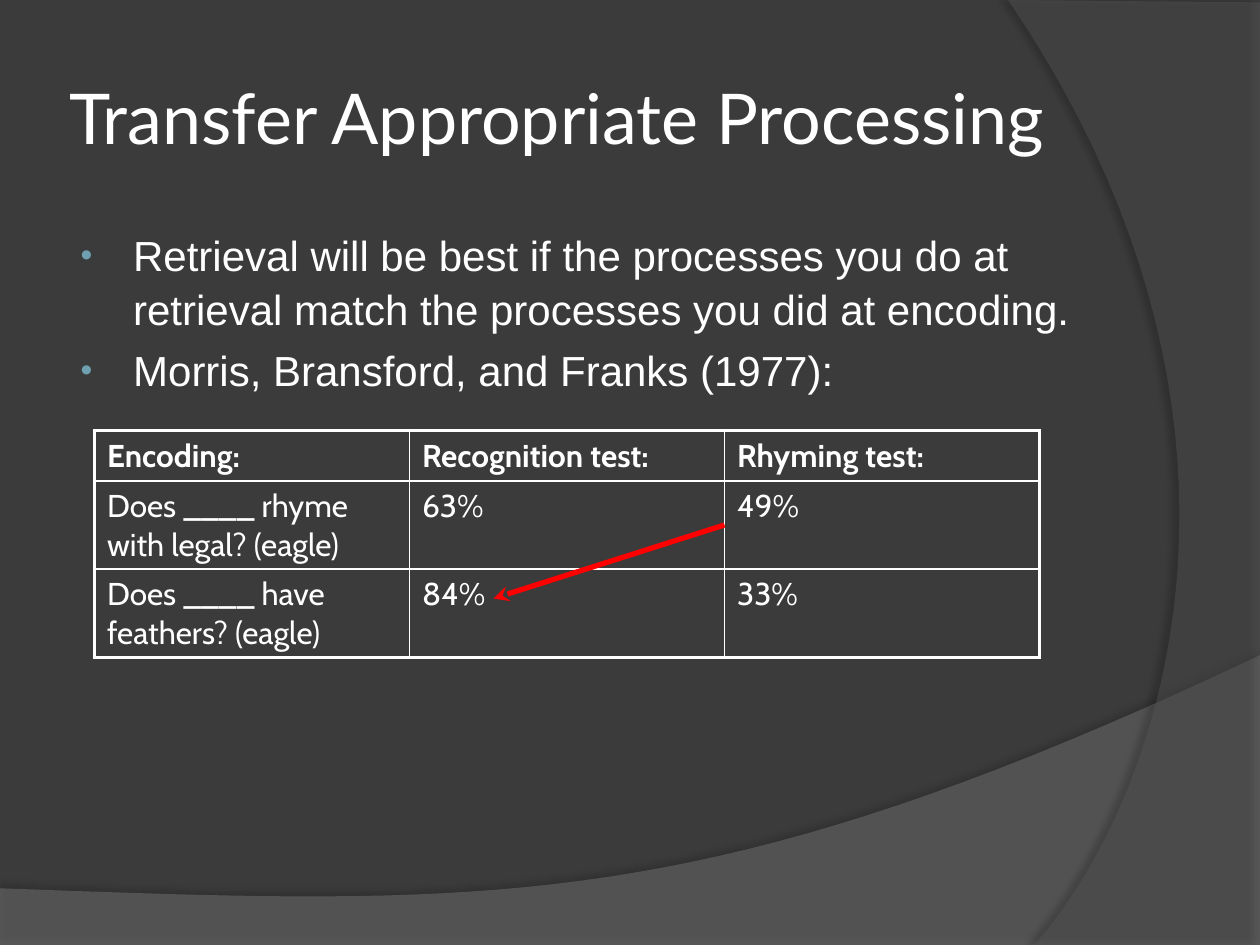
from lxml.etree import SubElement
from pptx import Presentation
from pptx.dml.color import RGBColor
from pptx.enum.shapes import MSO_CONNECTOR as Connector
from pptx.enum.text import MSO_ANCHOR as Anchor
from pptx.oxml.ns import qn
from pptx.util import Pt

BACKGROUND = RGBColor(0x3B, 0x3B, 0x3B)
WAVE_GRAY = RGBColor(0x7C, 0x7C, 0x7C)
ARC_GRAY = RGBColor(0x59, 0x59, 0x59)
WHITE = RGBColor(0xFF, 0xFF, 0xFF)
BULLET_BLUE = RGBColor(0x6E, 0xA0, 0xB0)
RED = RGBColor(0xFF, 0x00, 0x00)
BLACK = RGBColor(0x00, 0x00, 0x00)


def add_element(parent, tag, **attributes):
    return SubElement(parent, qn(tag), {key: str(value) for key, value in attributes.items()})


def add_color(parent, color):
    return add_element(parent, "a:srgbClr", val=color)


def write_text(paragraph, text, font="Arial", size=24, color=WHITE, bold=False):
    run = paragraph.add_run()
    run.text = text
    run.font.name = font
    run.font.size = Pt(size)
    run.font.color.rgb = color
    run.font.bold = bold


def curve(start, control_1, control_2, end, steps=40):
    """Points along a cubic curve, both ends included."""
    points = []
    for step in range(steps + 1):
        t = step / steps
        weights = ((1 - t) ** 3, 3 * t * (1 - t) ** 2, 3 * t * t * (1 - t), t ** 3)
        corners = zip(start, control_1, control_2, end)
        points.append(tuple(sum(w * v for w, v in zip(weights, axis))
                            for axis in zip(start, control_1, control_2, end)))
    return points


class SlideBuilder:
    def __init__(self, slide):
        self.slide = slide
        self.shapes = slide.shapes
        slide.background.fill.solid()
        slide.background.fill.fore_color.rgb = BACKGROUND

    def panel(self, points, color, opacity, shadow_opacity, distance, direction):
        vertices = [(Pt(x), Pt(y)) for x, y in points]
        builder = self.shapes.build_freeform(*vertices[0], scale=1.0)
        builder.add_line_segments(vertices[1:], close=True)
        shape = builder.convert_to_shape()
        shape.line.fill.background()
        shape.fill.solid()
        shape.fill.fore_color.rgb = color
        properties = shape.element.spPr
        fill_color = properties.find(qn("a:solidFill")).find(qn("a:srgbClr"))
        add_element(fill_color, "a:alpha", val=opacity * 1000)
        # Soft shadow along the curved edge
        shape.shadow.inherit = False
        shadow = add_element(properties.find(qn("a:effectLst")), "a:outerShdw",
                             blurRad=Pt(4), dist=Pt(distance), dir=direction * 60000,
                             algn="ctr", rotWithShape=0)
        add_element(add_color(shadow, BLACK), "a:alpha", val=shadow_opacity * 1000)

    def text_box(self, left, top, width, height, anchor=Anchor.TOP, inset=7.2):
        box = self.shapes.add_textbox(Pt(left), Pt(top), Pt(width), Pt(height))
        frame = box.text_frame
        frame.word_wrap = True
        frame.vertical_anchor = anchor
        frame.margin_left = frame.margin_right = Pt(inset)
        return frame

    def title(self, text, *box):
        frame = self.text_box(*box, anchor=Anchor.MIDDLE, inset=3.6)
        write_text(frame.paragraphs[0], text, font="Lato", size=40)

    def bullets(self, items, *box):
        frame = self.text_box(*box)
        for index, item in enumerate(items):
            paragraph = frame.add_paragraph() if index else frame.paragraphs[0]
            paragraph.line_spacing = 1.06
            paragraph.space_after = Pt(4.8)
            write_text(paragraph, item)
            properties = paragraph._p.get_or_add_pPr()
            properties.set("marL", str(Pt(33)))
            properties.set("indent", str(-Pt(30)))
            add_color(add_element(properties, "a:buClr"), BULLET_BLUE)
            add_element(properties, "a:buSzPct", val=80000)
            add_element(properties, "a:buFont", typeface="Arial")
            add_element(properties, "a:buChar", char="•")

    def table(self, rows, left, top, column_width, row_heights):
        row_count, column_count = len(rows), len(rows[0])
        table = self.shapes.add_table(row_count, column_count, Pt(left), Pt(top),
                                      Pt(column_width * column_count),
                                      Pt(sum(row_heights))).table
        table.first_row = table.horz_banding = False
        for column in table.columns:
            column.width = Pt(column_width)
        for r, (texts, height) in enumerate(zip(rows, row_heights)):
            table.rows[r].height = Pt(height)
            for c, text in enumerate(texts):
                cell = table.cell(r, c)
                write_text(cell.text_frame.paragraphs[0], text,
                           font="Cabin", size=18, bold=r == 0)
                self.borders(cell, L=c == 0, R=c == column_count - 1,
                             T=r == 0, B=r == row_count - 1)
                cell.fill.background()

    def borders(self, cell, **outer_sides):
        properties = cell._tc.get_or_add_tcPr()
        for side, is_outer in outer_sides.items():
            line = add_element(properties, f"a:ln{side}", w=Pt(2.25 if is_outer else 1))
            add_color(add_element(line, "a:solidFill"), WHITE)

    def arrow(self, start, end, color, width):
        connector = self.shapes.add_connector(
            Connector.STRAIGHT, *(Pt(value) for value in (*start, *end)))
        connector.line.color.rgb = color
        connector.line.width = Pt(width)
        add_element(connector.line._get_or_add_ln(), "a:tailEnd", type="stealth")
        add_element(connector.element.spPr, "a:effectLst")


def main():
    presentation = Presentation()
    presentation.slide_width, presentation.slide_height = Pt(720), Pt(540)
    builder = SlideBuilder(presentation.slides.add_slide(presentation.slide_layouts[6]))

    # Curved background panels
    wave = curve((720, 374.4), (402.5, 524.9), (281.5, 517.7), (0, 507.6))
    builder.panel([(0, 540.7), (720, 540.7), *wave], WAVE_GRAY, 45,
                  shadow_opacity=35, distance=3.5, direction=270)
    arc = curve((591.1, 540), (673.2, 445.7), (733, 229.7), (576, 0))
    builder.panel([(720, 1.4), (720, 540), *arc], ARC_GRAY, 40,
                  shadow_opacity=45, distance=4, direction=180)

    # Title and main points
    builder.title("Transfer Appropriate Processing", 36, 21.6, 588, 90)
    builder.bullets([
        "Retrieval will be best if the processes you do at retrieval match "
        "the processes you did at encoding.",
        "Morris, Bransford, and Franks (1977):",
    ], 36, 126, 588, 356.4)

    # Study results
    builder.table([
        ("Encoding:", "Recognition test:", "Rhyming test:"),
        ("Does ____ rhyme with legal? (eagle)", "63%", "49%"),
        ("Does ____ have feathers? (eagle)", "84%", "33%"),
    ], 54, 246, 180, (28.8, 50.4, 50.4))
    builder.arrow((414, 300), (282, 342), RED, 3)

    presentation.save("out.pptx")


if __name__ == "__main__":
    main()
